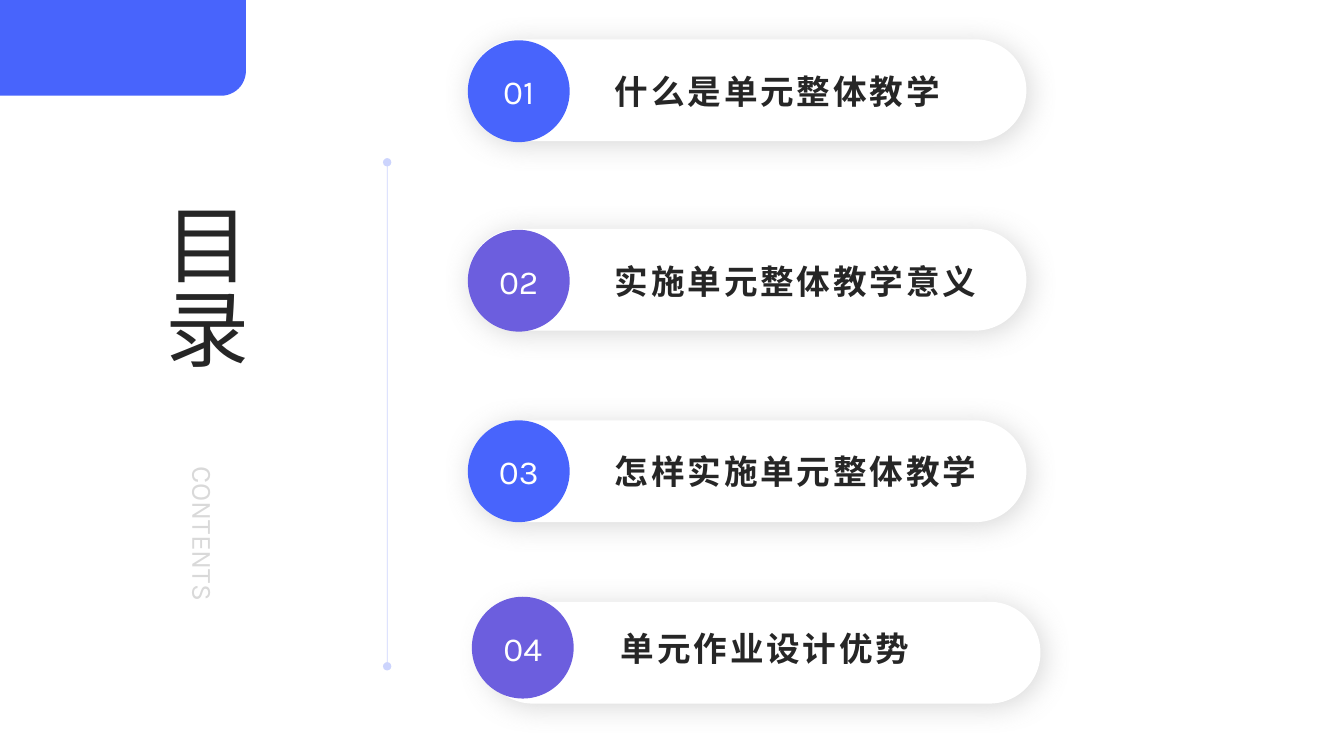
from lxml import etree
from pptx import Presentation
from pptx.dml.color import RGBColor
from pptx.enum.shapes import MSO_CONNECTOR, MSO_SHAPE
from pptx.enum.text import MSO_ANCHOR, MSO_AUTO_SIZE, PP_ALIGN
from pptx.oxml import parse_xml
from pptx.oxml.ns import nsdecls, qn
from pptx.util import Inches, Pt

BLUE = RGBColor(0x48, 0x64, 0xFC)
PURPLE = RGBColor(0x6C, 0x5E, 0xDE)
LINE_BLUE = RGBColor(0x00, 0x2A, 0xF9)
DARK = RGBColor(0x26, 0x26, 0x26)
GREY = RGBColor(0xD9, 0xD9, 0xD9)
WHITE = RGBColor(0xFF, 0xFF, 0xFF)

SOFT_SHADOW = (
    f'<a:effectLst {nsdecls("a")}>'
    '<a:outerShdw blurRad="254000" dist="38100" dir="2700000" algn="tl" rotWithShape="0">'
    '<a:srgbClr val="808080"><a:alpha val="30000"/></a:srgbClr>'
    '</a:outerShdw></a:effectLst>'
)


def add_block(kind, left, top, width, height, fill):
    sp = slide.shapes.add_shape(kind, Inches(left), Inches(top), Inches(width), Inches(height))
    sp.shadow.inherit = False
    sp.fill.solid()
    sp.fill.fore_color.rgb = fill
    sp.line.fill.background()
    return sp


def write(sp, text, size, color, align=PP_ALIGN.LEFT, bold=False, spacing=0,
          inset_x=0.1, inset_y=0.0, vertical=False):
    tf = sp.text_frame
    tf.word_wrap = True
    tf.auto_size = MSO_AUTO_SIZE.NONE
    tf.vertical_anchor = MSO_ANCHOR.MIDDLE
    tf.margin_left = tf.margin_right = Inches(inset_x)
    tf.margin_top = tf.margin_bottom = Inches(inset_y)
    if vertical:
        sp.element.txBody.find(qn("a:bodyPr")).set("vert", "eaVert")
    p = tf.paragraphs[0]
    p.alignment = align
    r = p.add_run()
    r.text = text
    r.font.name = "Karla"
    r.font.size = Pt(size)
    r.font.bold = bold
    r.font.color.rgb = color
    if spacing:
        r.font._element.set("spc", str(spacing * 100))


prs = Presentation()
prs.slide_width, prs.slide_height = Inches(13.33), Inches(7.5)
slide = prs.slides.add_slide(prs.slide_layouts[5])

# Divider with a dot at each end
divider = slide.shapes.add_connector(
    MSO_CONNECTOR.STRAIGHT, Inches(3.84), Inches(1.61), Inches(3.84), Inches(6.61))
divider.line.width = Pt(0.5)
divider.line.color.rgb = LINE_BLUE
ln = divider.element.spPr.find(qn("a:ln"))
etree.SubElement(ln.find(".//" + qn("a:srgbClr")), qn("a:alpha")).set("val", "20000")
for end in ("a:headEnd", "a:tailEnd"):
    etree.SubElement(ln, qn(end)).set("type", "oval")
etree.SubElement(divider.element.spPr, qn("a:effectLst"))

# Corner block, rounded at the bottom right
corner = add_block(MSO_SHAPE.ROUND_1_RECTANGLE, -0.02, 0, 2.46, 0.95, BLUE)
corner.adjustments[0] = 0.26
corner.element.spPr.find(qn("a:xfrm")).set("flipV", "1")

# Vertical headings
title = slide.shapes.title
title.left, title.top = Inches(1.28), Inches(1.96)
title.width, title.height = Inches(1.5), Inches(2.32)
write(title, "目录", 60, DARK, inset_y=0.05, vertical=True)

subtitle = slide.shapes.add_textbox(Inches(1.27), Inches(4.53), Inches(1.5), Inches(2.13))
write(subtitle, "CONTENTS", 20, GREY, align=PP_ALIGN.JUSTIFY, inset_y=0.05, vertical=True)

# Contents: text, bar left and top, circle left and top, label left
ITEMS = [
    ("什么是单元整体教学", 4.64, 0.39, 4.64, 0.4, 6),
    ("实施单元整体教学意义", 4.64, 2.27, 4.64, 2.28, 6),
    ("怎样实施单元整体教学", 4.64, 4.17, 4.64, 4.17, 6),
    ("单元作业设计优势", 4.78, 5.97, 4.68, 5.92, 6.06),
]
for i, (text, bar_left, bar_top, left, top, label_left) in enumerate(ITEMS):
    bar = add_block(MSO_SHAPE.ROUNDED_RECTANGLE, bar_left, bar_top, 5.54, 1.01, WHITE)
    bar.adjustments[0] = 0.5
    spPr = bar.element.spPr
    spPr.replace(spPr.find(qn("a:effectLst")), parse_xml(SOFT_SHADOW))

    circle = add_block(MSO_SHAPE.OVAL, left, top, 1.01, 1.01, (BLUE, PURPLE)[i % 2])
    write(circle, f"{i + 1:02}", 24, WHITE, align=PP_ALIGN.CENTER, inset_x=0)

    label = slide.shapes.add_textbox(Inches(label_left), Inches(top), Inches(4.19), Inches(1.01))
    write(label, text, 24, DARK, bold=True, spacing=2)

prs.save("out.pptx")
